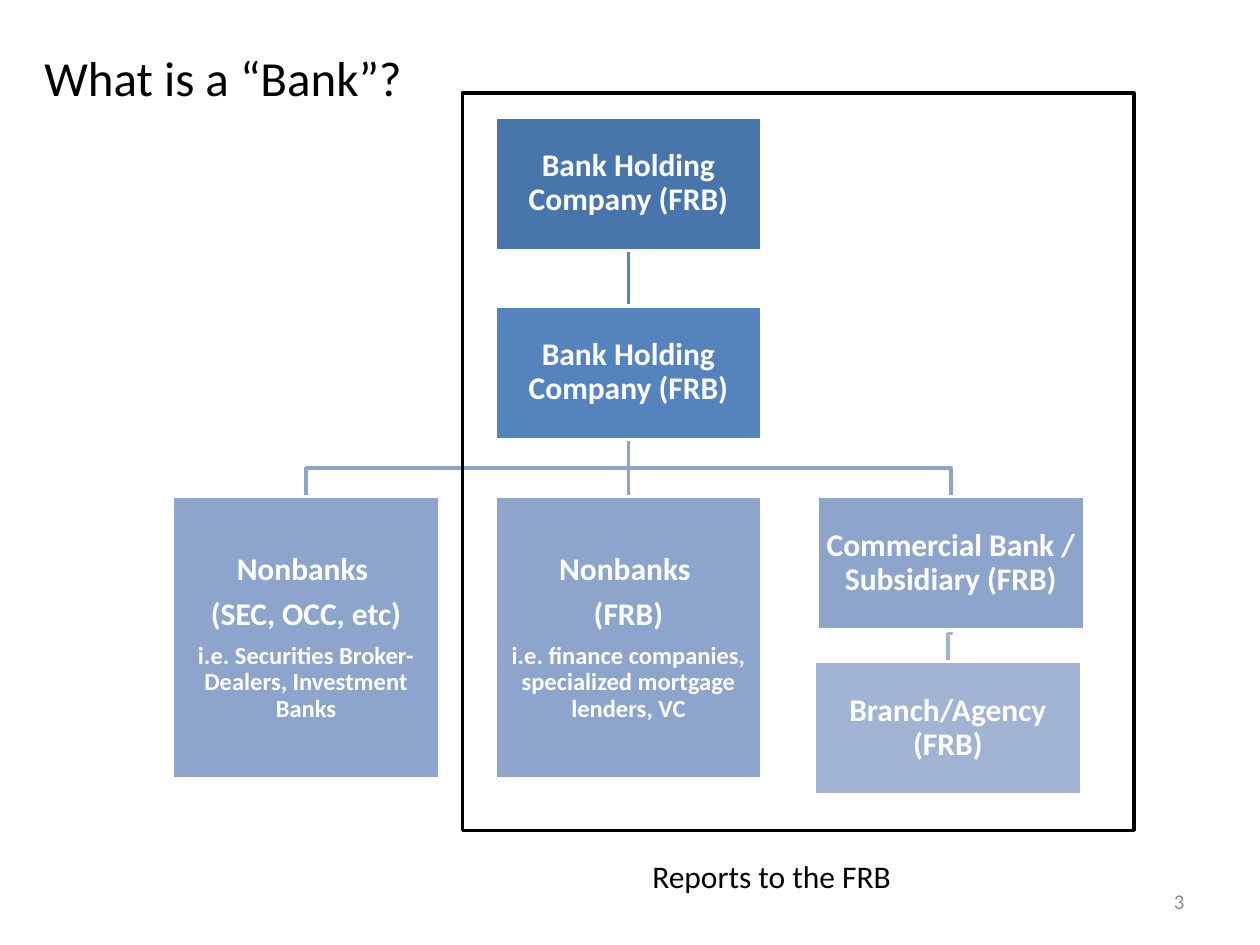
from lxml import etree
from pptx import Presentation
from pptx import util as u
from pptx.dml.color import RGBColor
from pptx.enum import shapes, text
from pptx.oxml.ns import qn

WHITE = RGBColor(0xFF, 0xFF, 0xFF)
BLACK = RGBColor(0, 0, 0)
GREY = RGBColor(0x8C, 0x8C, 0x8C)
TOP_BLUE = RGBColor(0x48, 0x75, 0xAC)
MID_BLUE = RGBColor(0x54, 0x83, 0xBE)
UNIT_BLUE = RGBColor(0x8D, 0xA5, 0xCC)
BRANCH_BLUE = RGBColor(0xA1, 0xB4, 0xD4)
FONT = "Calibri"

TITLE = "What is a “Bank”?"
CAPTION = "Reports to the FRB"
PAGE = "3"

BOX_W, BOX_H, TALL_H = 5.38, 2.69, 5.69
COLUMNS = [3.48 + 6.5 * i for i in range(3)]
ROWS = [2.36, 6.17, 10.01, 13.34]
BRANCH_X = COLUMNS[2] - 0.06

UNITS = {
    "parent": (COLUMNS[1], ROWS[0], BOX_H, TOP_BLUE, [("Bank Holding Company (FRB)", 18)]),
    "holding": (COLUMNS[1], ROWS[1], BOX_H, MID_BLUE, [("Bank Holding Company (FRB)", 18)]),
    "outside": (COLUMNS[0], ROWS[2], TALL_H, UNIT_BLUE, [
        ("Nonbanks ", 18), ("(SEC, OCC, etc)", 18),
        ("i.e. Securities Broker-Dealers, Investment Banks", 14)]),
    "nonbank": (COLUMNS[1], ROWS[2], TALL_H, UNIT_BLUE, [
        ("Nonbanks ", 18), ("(FRB)", 18),
        ("i.e. finance companies, specialized mortgage lenders, VC", 14)]),
    "bank": (COLUMNS[2], ROWS[2], BOX_H, UNIT_BLUE, [("Commercial Bank / Subsidiary (FRB)", 18)]),
    "branch": (BRANCH_X, ROWS[3], BOX_H, BRANCH_BLUE, [("Branch/Agency (FRB)", 18)]),
}
LINKS = [
    ("bank", "branch", BRANCH_BLUE, 0.12),
    ("holding", "bank", UNIT_BLUE, 0.5),
    ("holding", "nonbank", UNIT_BLUE, 0.5),
    ("holding", "outside", UNIT_BLUE, 0.5),
    ("parent", "holding", MID_BLUE, 0.5),
]

prs = Presentation()
prs.slide_width, prs.slide_height = u.Cm(25.4), u.Cm(19.05)
slide = prs.slides.add_slide(prs.slide_layouts[5])


def place(shape, left, top, width, height):
    shape.left, shape.top = u.Cm(left), u.Cm(top)
    shape.width, shape.height = u.Cm(width), u.Cm(height)


def write(frame, lines, color, align, anchor, bold=False):
    frame.text = "\n".join(line for line, size in lines)
    frame.word_wrap = True
    frame.auto_size = text.MSO_AUTO_SIZE.NONE
    frame.vertical_anchor = anchor
    for paragraph, (line, size) in zip(frame.paragraphs, lines):
        paragraph.alignment = align
        font = paragraph.runs[0].font
        font.name, font.size, font.bold = FONT, u.Pt(size), bold
        font.color.rgb = color


def outline(shape, color):
    shape.line.color.rgb = color
    shape.line.width = u.Pt(2)


def link(upper, lower, color, turn):
    x1, top, height = UNITS[upper][:3]
    x2, y2 = UNITS[lower][:2]
    x1, x2, y1 = x1 + BOX_W / 2, x2 + BOX_W / 2, top + height
    if x1 == x2:
        line = slide.shapes.add_connector(
            shapes.MSO_CONNECTOR.STRAIGHT, u.Cm(x1), u.Cm(y1), u.Cm(x2), u.Cm(y2))
        etree.SubElement(line.element.spPr, qn("a:effectLst"))
    else:
        bend = y1 + (y2 - y1) * turn
        path_builder = slide.shapes.build_freeform(u.Cm(x1), u.Cm(y1))
        corners = [(x1, bend), (x2, bend), (x2, y2)]
        path_builder.add_line_segments([(u.Cm(x), u.Cm(y)) for x, y in corners], close=False)
        line = path_builder.convert_to_shape()
        line.fill.background()
        line.shadow.inherit = False
    outline(line, color)


def rectangle(left, top, width, height, color):
    box = slide.shapes.add_shape(
        shapes.MSO_SHAPE.RECTANGLE, u.Cm(left), u.Cm(top), u.Cm(width), u.Cm(height))
    box.shadow.inherit = False
    outline(box, color)
    return box


def unit(left, top, height, color, lines):
    box = rectangle(left, top, BOX_W, height, WHITE)
    box.fill.solid()
    box.fill.fore_color.rgb = color
    frame = box.text_frame
    frame.margin_left = frame.margin_right = u.Cm(0.03)
    frame.margin_top = frame.margin_bottom = u.Cm(0.03)
    write(frame, lines, WHITE, text.PP_ALIGN.CENTER, text.MSO_ANCHOR.MIDDLE, bold=True)
    for paragraph, (line, size) in zip(frame.paragraphs, lines):
        paragraph.line_spacing = 0.9
        paragraph.space_after = u.Pt(size * 0.35)


def label(left, top, width, height, line, size, color, align, anchor):
    box = slide.shapes.add_textbox(u.Cm(left), u.Cm(top), u.Cm(width), u.Cm(height))
    write(box.text_frame, [(line, size)], color, align, anchor)


title = slide.shapes.title
place(title, 0.64, 0.84, 21.16, 1.45)
write(title.text_frame, [(TITLE, 28)], BLACK, text.PP_ALIGN.LEFT, text.MSO_ANCHOR.TOP)

for ends in LINKS:
    link(*ends)
for details in UNITS.values():
    unit(*details)

frb_frame = rectangle(9.32, 1.88, 13.54, 14.86, BLACK)
frb_frame.fill.background()

label(12.9, 17.15, 6.35, 1.07, CAPTION, 18, BLACK, text.PP_ALIGN.LEFT, text.MSO_ANCHOR.TOP)
label(18.21, 17.65, 5.92, 1.02, PAGE, 12, GREY, text.PP_ALIGN.RIGHT, text.MSO_ANCHOR.MIDDLE)

prs.save("out.pptx")
